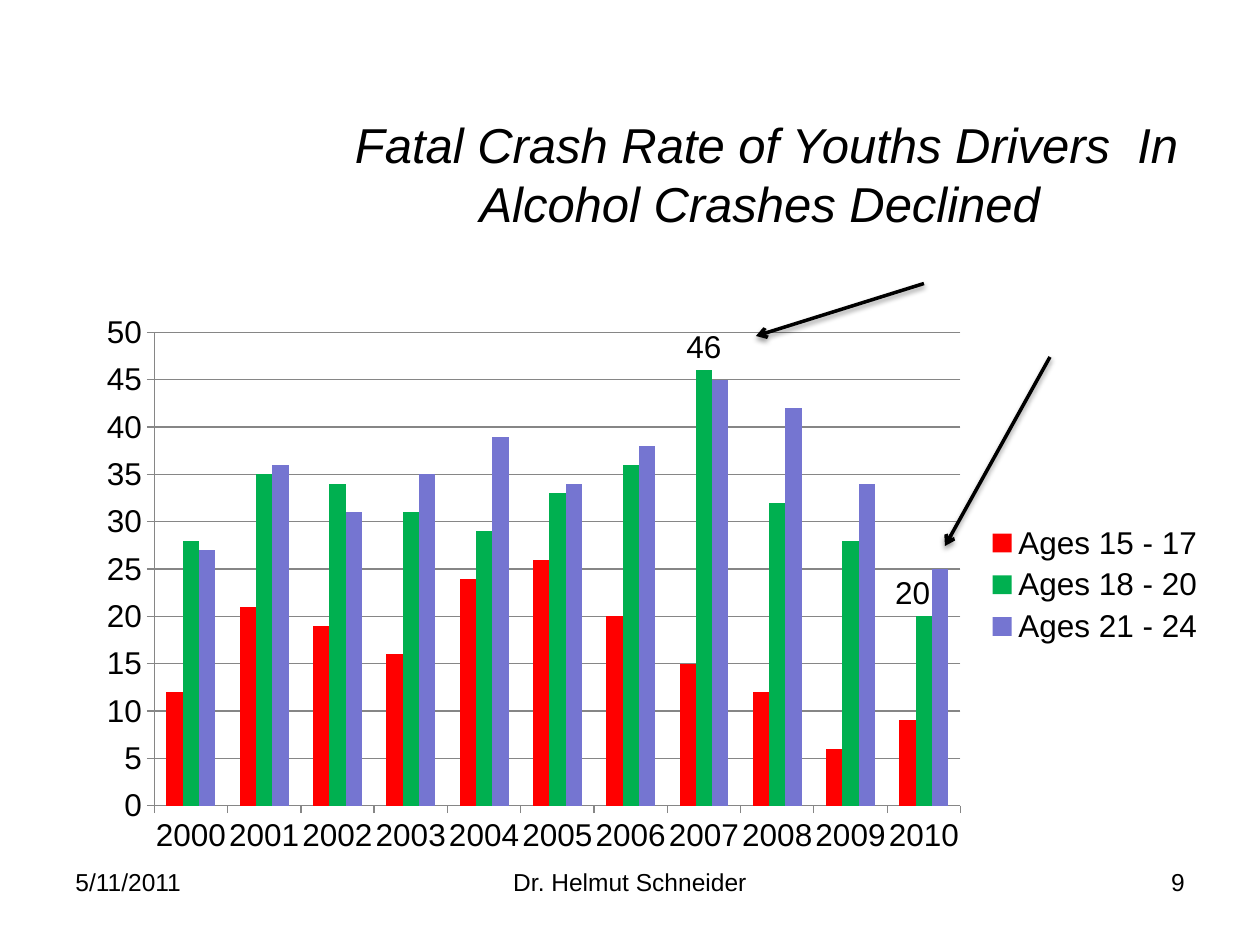
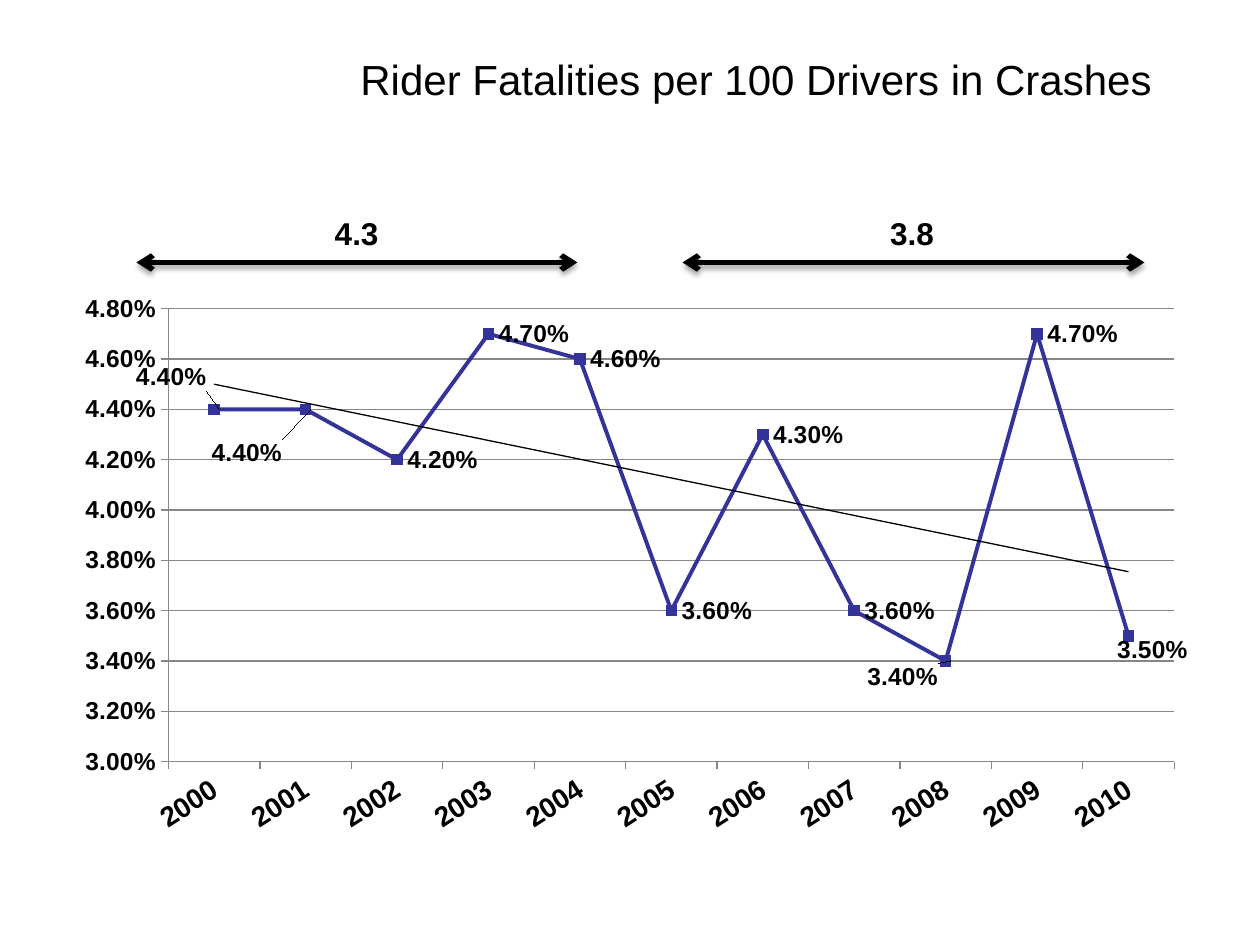
from pptx import Presentation
from pptx.chart.data import CategoryChartData
from pptx.dml.color import RGBColor
from pptx.enum.chart import XL_CHART_TYPE, XL_LABEL_POSITION, XL_LEGEND_POSITION
from pptx.enum.chart import XL_MARKER_STYLE, XL_TICK_MARK
from pptx.enum.shapes import MSO_CONNECTOR
from pptx.enum.text import MSO_ANCHOR, PP_ALIGN
from pptx.oxml import parse_xml
from pptx.oxml.ns import nsdecls
from pptx.util import Inches, Pt

COLORS = {
    "ink": "000000", "paper": "FFFFFF", "rule": "868686",
    "teens": "FF0000", "young": "00B050", "adults": "7575D1", "rate": "333399",
}
FONT = "Arial"
CELL = Inches(1) / 12  # the 10 x 7.5 inch slide is 120 columns by 90 rows
YEARS = [str(year) for year in range(2000, 2011)]


def color(name):
    return RGBColor.from_string(COLORS[name])


def apply(target, values):
    for attribute, value in values.items():
        setattr(target, attribute, value)


def grid(*cells):
    return [round(cell * CELL) for cell in cells]


class Deck:
    """Holds the shared style and the slide being filled."""

    def __init__(self):
        self.show = Presentation()
        apply(self.show, {"slide_width": Inches(10), "slide_height": Inches(7.5)})
        self.slide = None

    def new_slide(self):
        self.slide = self.show.slides.add_slide(self.show.slide_layouts[6])
        fill = self.slide.background.fill
        fill.solid()
        fill.fore_color.rgb = color("paper")

    def style_font(self, font, size, **extra):
        apply(font, {"name": FONT, "size": Pt(size), **extra})
        font.color.rgb = color("ink")

    def text(self, words, area, size, align=PP_ALIGN.LEFT, anchor=MSO_ANCHOR.TOP,
             wrap=True, **extra):
        frame = self.slide.shapes.add_textbox(*grid(*area)).text_frame
        apply(frame, {"word_wrap": wrap, "vertical_anchor": anchor})
        paragraph = frame.paragraphs[0]
        paragraph.alignment = align
        run = paragraph.add_run()
        run.text = words
        self.style_font(run.font, size, **extra)

    def title(self, words, area, size, **extra):
        self.text(words, area, size, PP_ALIGN.CENTER, MSO_ANCHOR.MIDDLE, **extra)

    def footer(self, date, author, number):
        self.text(date, (6, 82, 28, 6.25), 14)
        self.text(author, (41, 82, 38, 6.25), 14, PP_ALIGN.CENTER)
        self.text(number, (86, 82, 28, 6.25), 14, PP_ALIGN.RIGHT)

    def arrow(self, start, end, width, ends=("tailEnd",), opacity=38, drop=1.6):
        arrow = self.slide.shapes.add_connector(
            MSO_CONNECTOR.STRAIGHT, *grid(*start, *end))
        arrow.line.color.rgb = color("ink")
        arrow.line.width = Pt(width)
        outline = arrow.element.xpath(".//a:ln")[0]
        for end_tag in ends:
            outline.append(parse_xml(f'<a:{end_tag} {nsdecls("a")} type="arrow"/>'))
        outline.getparent().append(parse_xml(
            f'<a:effectLst {nsdecls("a")}><a:outerShdw blurRad="{Pt(3.1)}" '
            f'dist="{Pt(drop)}" dir="5400000" rotWithShape="0">'
            f'<a:srgbClr val="{COLORS["ink"]}"><a:alpha val="{opacity * 1000}"/>'
            '</a:srgbClr></a:outerShdw></a:effectLst>'))

    def chart(self, kind, area, series, plot_area, scale, number_format="General",
              size=18):
        data = CategoryChartData(number_format=number_format)
        data.categories = YEARS
        for name, values in series:
            data.add_series(name, values)
        chart = self.slide.shapes.add_chart(kind, *grid(*area), data).chart
        apply(chart, {"has_title": False, "has_legend": False})
        self.style_font(chart.font, size)
        chart.plots[0].vary_by_categories = False
        apply(chart.value_axis, scale)
        chart.value_axis.tick_labels.number_format = number_format
        chart.value_axis.tick_labels.number_format_is_linked = False
        for axis in (chart.category_axis, chart.value_axis):
            apply(axis, {"major_tick_mark": XL_TICK_MARK.OUTSIDE,
                         "minor_tick_mark": XL_TICK_MARK.NONE})
            self.rule(axis.format.line)
        chart.value_axis.has_major_gridlines = True
        self.rule(chart.value_axis.major_gridlines.format.line)
        self.place_plot(chart, plot_area)
        return chart

    def rule(self, line):
        line.color.rgb = color("rule")
        line.width = Pt(0.75)

    def place_plot(self, chart, shares):
        plot = chart.element.xpath(".//c:plotArea")[0]
        for layout in plot.xpath("./c:layout"):
            plot.remove(layout)
        modes = '<c:layoutTarget val="inner"/><c:xMode val="edge"/><c:yMode val="edge"/>'
        plot.insert(0, self.layout(modes, zip("xywh", shares)))

    def layout(self, modes, shares):
        places = "".join(f'<c:{key} val="{share}"/>' for key, share in shares)
        return parse_xml(f'<c:layout {nsdecls("c")}><c:manualLayout>{modes}{places}'
                         '</c:manualLayout></c:layout>')

    def point_label(self, chart, series, index, position, size, shift, **extra):
        label = series.points[index].data_label
        self.style_font(label.font, size, **extra)
        label.position = position
        mark = chart.element.xpath(f'.//c:dLbl/c:idx[@val="{index}"]')[0]
        mark.addnext(self.layout("", zip("xy", shift)))

    def trend(self, chart):
        chart.element.xpath(".//c:ser/c:cat")[0].addprevious(parse_xml(
            f'<c:trendline {nsdecls("c", "a")}><c:spPr><a:ln w="{Pt(0.75)}"><a:solidFill>'
            f'<a:srgbClr val="{COLORS["ink"]}"/></a:solidFill></a:ln></c:spPr>'
            '<c:trendlineType val="linear"/><c:dispRSqr val="0"/><c:dispEq val="0"/>'
            '</c:trendline>'))


def crash_rate_slide(deck):
    deck.new_slide()
    deck.title("Fatal Crash Rate of Youths Drivers  In Alcohol Crashes Declined ",
               (32, 9, 82, 15), 28, italic=True)
    deck.footer("5/11/2011", "Dr. Helmut Schneider", "9")

    # Crashes by age group
    groups = {
        "teens": ("Ages 15 - 17", (12, 21, 19, 16, 24, 26, 20, 15, 12, 6, 9)),
        "young": ("Ages 18 - 20", (28, 35, 34, 31, 29, 33, 36, 46, 32, 28, 20)),
        "adults": ("Ages 21 - 24", (27, 36, 31, 35, 39, 34, 38, 45, 42, 34, 25)),
    }
    crashes = deck.chart(
        XL_CHART_TYPE.COLUMN_CLUSTERED, (8, 29, 108, 53.4), groups.values(),
        (0.062, 0.05, 0.711, 0.844),
        {"minimum_scale": 0, "maximum_scale": 50, "major_unit": 5})
    apply(crashes.plots[0], {"gap_width": 150, "overlap": 0})
    for ages, columns in zip(groups, crashes.plots[0].series):
        columns.format.fill.solid()
        columns.format.fill.fore_color.rgb = color(ages)
    crashes.has_legend = True
    apply(crashes.legend, {"position": XL_LEGEND_POSITION.RIGHT,
                           "include_in_layout": False})
    deck.style_font(crashes.legend.font, 18)

    # Peak and latest value
    young = crashes.plots[0].series[1]
    young.data_labels.show_value = False
    for index, shift in ((7, (0, 0)), (10, (-0.01, 0))):
        deck.point_label(crashes, young, index, XL_LABEL_POSITION.OUTSIDE_END, 18, shift)
    deck.arrow((88, 27), (72, 32), 2)
    deck.arrow((100, 34), (90, 52), 2)


def rider_slide(deck):
    deck.new_slide()
    deck.title("Rider Fatalities per 100 Drivers in Crashes", (31, 2, 82, 11), 24)

    # Yearly rate with its trend
    rates = (0.044, 0.044, 0.042, 0.047, 0.046, 0.036, 0.043, 0.036, 0.034, 0.047, 0.035)
    riders = deck.chart(
        XL_CHART_TYPE.LINE_MARKERS, (6, 27, 108, 53.4), [("Series 1", rates)],
        (0.093, 0.045, 0.887, 0.808),
        {"minimum_scale": 0.03, "maximum_scale": 0.048, "major_unit": 0.002},
        "0.00%", 10)
    deck.style_font(riders.category_axis.tick_labels.font, 16, bold=True)
    deck.style_font(riders.value_axis.tick_labels.font, 14, bold=True)
    year_text = riders.category_axis.tick_labels.font
    riders.element.xpath(".//c:catAx/c:txPr/a:bodyPr")[0].set("rot", str(-33 * 60000))

    rate = riders.plots[0].series[0]
    rate.smooth = False
    rate.format.line.color.rgb = color("rate")
    rate.format.line.width = Pt(2.25)
    apply(rate.marker, {"style": XL_MARKER_STYLE.SQUARE, "size": 6})
    rate.marker.format.fill.solid()
    rate.marker.format.fill.fore_color.rgb = color("rate")
    rate.marker.format.line.color.rgb = color("rate")

    apply(rate.data_labels, {"show_value": True, "position": XL_LABEL_POSITION.RIGHT})
    deck.style_font(rate.data_labels.font, 14, bold=True)
    shifts = {0: (-0.078, -0.057), 1: (-0.092, 0.078),
              8: (-0.078, 0.029), 10: (-0.019, 0.025)}
    for index, shift in shifts.items():
        deck.point_label(riders, rate, index, XL_LABEL_POSITION.RIGHT, 14, shift, bold=True)
    deck.trend(riders)

    # Averages of the two periods
    for average, left, right, label_left in (("4.3", 13, 55, 30.7), ("3.8", 65, 109, 83.6)):
        deck.arrow((left, 25), (right, 25), 3, ("headEnd", "tailEnd"), 35, 1.8)
        deck.text(average, (label_left, 19.8, 6.6, 4.8), 18, wrap=False, bold=True)


def main():
    deck = Deck()
    crash_rate_slide(deck)
    rider_slide(deck)
    deck.show.save("out.pptx")


if __name__ == "__main__":
    main()
